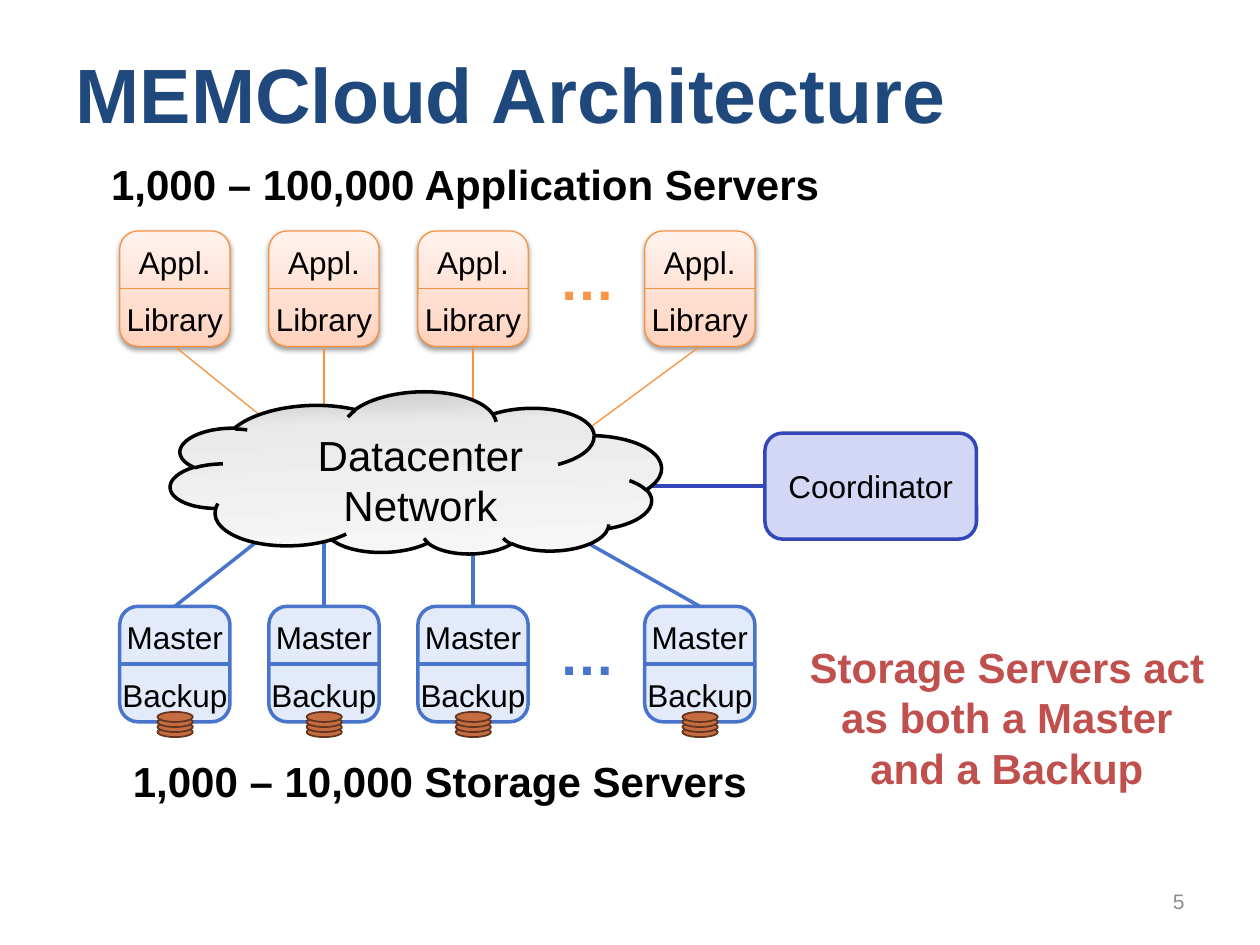
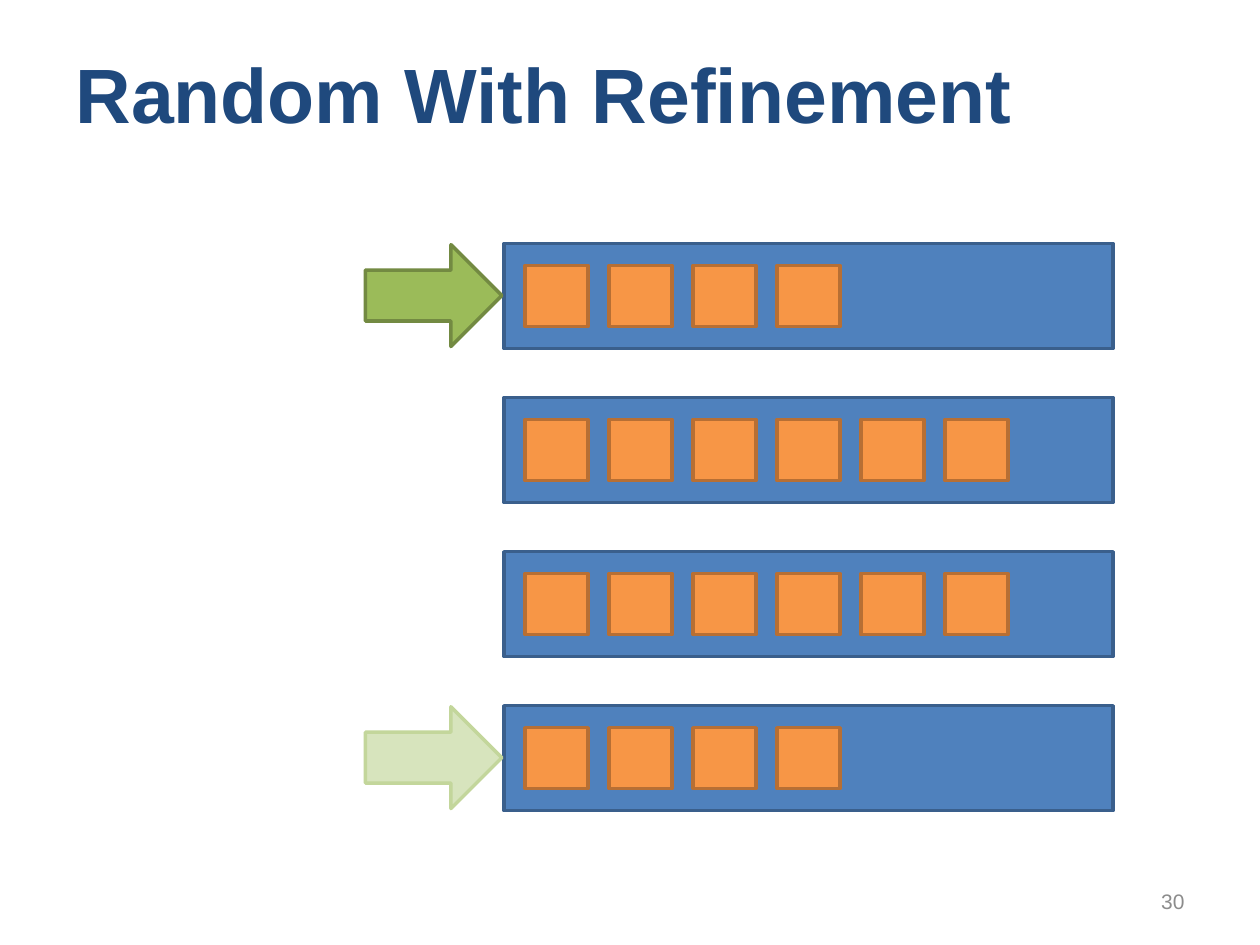
from lxml import etree
from pptx import Presentation
from pptx import util as u
from pptx.dml.color import RGBColor
from pptx.enum import shapes, text
from pptx.oxml import ns

BLACK = RGBColor(0x00, 0x00, 0x00)
NAVY = RGBColor(0x1F, 0x49, 0x7D)
GRAY = RGBColor(0x8C, 0x8C, 0x8C)
RED = RGBColor(0xC0, 0x50, 0x4D)
ORANGE = RGBColor(0xF7, 0x96, 0x46)
AMBER = RGBColor(0xF6, 0x92, 0x40)
RUST = RGBColor(0xB7, 0x6F, 0x34)
COPPER = RGBColor(0xC5, 0x6D, 0x41)
BROWN = RGBColor(0x64, 0x35, 0x1E)
BLUE = RGBColor(0x4F, 0x81, 0xBD)
STEEL = RGBColor(0x3A, 0x5F, 0x8C)
SKY = RGBColor(0x49, 0x74, 0xCB)
ICE = RGBColor(0xE3, 0xEA, 0xF9)
INDIGO = RGBColor(0x34, 0x47, 0xB8)
LILAC = RGBColor(0xD2, 0xD7, 0xF6)
GREEN = RGBColor(0x9B, 0xBB, 0x59)
OLIVE = RGBColor(0x73, 0x8A, 0x42)
MINT = RGBColor(0xD7, 0xE4, 0xBD)
SAGE = RGBColor(0xC3, 0xD6, 0x9B)
PEACH = [(0, RGBColor(0xFF, 0xD2, 0xBD)), (35, RGBColor(0xFF, 0xDE, 0xD0)),
         (100, RGBColor(0xFF, 0xF2, 0xED))]
SILVER = [(0, RGBColor(0xF8, 0xF8, 0xF8)), (76, RGBColor(0xEA, 0xEA, 0xEA)),
          (100, RGBColor(0xC0, 0xC0, 0xC0))]

FONT = "Arial"
COLS, ROWS = 120, 90
LEFT, MID, RIGHT = text.PP_ALIGN.LEFT, text.PP_ALIGN.CENTER, text.PP_ALIGN.RIGHT
TOP, CORE = text.MSO_ANCHOR.TOP, text.MSO_ANCHOR.MIDDLE
KIND = shapes.MSO_SHAPE


def node(parent, tag, **attrs):
    return etree.SubElement(parent, ns.qn(tag), **attrs)


class Deck:
    """Holds the style and the current slide; lengths are grid columns and rows."""

    def __init__(self):
        self.prs = Presentation()
        self.prs.slide_width, self.prs.slide_height = u.Inches(10), u.Inches(7.5)
        self.col = self.prs.slide_width / COLS
        self.row = self.prs.slide_height / ROWS

    def place(self, *cells):
        units = (self.col, self.row) * 2
        return [round(cell * unit) for cell, unit in zip(cells, units)]

    def page(self, title, number):
        self.slide = self.prs.slides.add_slide(self.prs.slide_layouts[5])
        head = self.slide.shapes.title
        head.left, head.top, head.width, head.height = self.place(6, 3.6, 108, 10.4)
        self.letter(head, title, 44, NAVY, LEFT, True, CORE)
        self.label(str(number), (86, 83.4, 28, 4.8), 12, GRAY, RIGHT, anchor=CORE)

    def letter(self, shape, words, size, hue, align=MID, bold=False, anchor=TOP):
        """Set the words of a shape and their style."""
        frame = shape.text_frame
        frame.text = words
        frame.word_wrap = True
        frame.auto_size = text.MSO_AUTO_SIZE.NONE
        frame.vertical_anchor = anchor
        for para in frame.paragraphs:
            para.alignment = align
            para.font.name, para.font.size = FONT, u.Pt(size)
            para.font.bold, para.font.color.rgb = bold, hue
        return frame

    def label(self, words, cells, size, hue=BLACK, align=MID, bold=False,
              anchor=TOP, inset=True):
        box = self.slide.shapes.add_textbox(*self.place(*cells))
        frame = self.letter(box, words, size, hue, align, bold, anchor)
        if not inset:
            frame.margin_left = frame.margin_right = 0
            frame.margin_top = frame.margin_bottom = 0
        return frame

    def shape(self, kind, cells, fill, line, width=2):
        item = self.slide.shapes.add_shape(kind, *self.place(*cells))
        item.shadow.inherit = False
        if isinstance(fill, list):
            self.blend(item, fill)
        else:
            item.fill.solid()
            item.fill.fore_color.rgb = fill
        item.line.color.rgb, item.line.width = line, u.Pt(width)
        return item

    def blend(self, item, stops):
        """Fill with a gradient that runs from bottom to top."""
        item.fill.gradient()
        item.fill.gradient_angle = 90
        ramp = item.element.spPr.find(".//" + ns.qn("a:gsLst"))
        for old in list(ramp):
            ramp.remove(old)
        for share, hue in stops:
            stop = node(ramp, "a:gs", pos=str(share * 1000))
            node(stop, "a:srgbClr", val=str(hue))

    def shade(self, item):
        effects = item.element.spPr.find(ns.qn("a:effectLst"))
        drop = node(effects, "a:outerShdw", blurRad=str(u.Pt(3.1)),
                    dist=str(u.Pt(1.6)), dir="5400000", rotWithShape="0")
        hue = node(drop, "a:srgbClr", val=str(BLACK))
        node(hue, "a:alpha", val="38000")

    def wire(self, box, side, hue, width, end=(0, 0), far=None):
        """Join a side of the box to a grid point, or to its far side."""
        x, y = self.place(*end)
        wire = self.slide.shapes.add_connector(
            shapes.MSO_CONNECTOR.STRAIGHT, x, y, x, y)
        wire.begin_connect(box, side)
        if far is not None:
            wire.end_connect(box, far)
        wire.line.color.rgb, wire.line.width = hue, u.Pt(width)
        node(wire.element.spPr, "a:effectLst")

    def server(self, x, y, parts, fill, line, width):
        """Draw a box of two halves, each with its name."""
        box = self.shape(KIND.ROUNDED_RECTANGLE, (x, y, 10.5, 11), fill, line, width)
        for i, part in enumerate(parts):
            self.label(part, (x, y + 1.1 + 5.5 * i, 10.5, 3.4), 18, inset=False)
        self.wire(box, 1, line, width, far=3)
        return box

    def disk(self, x, y):
        for i in range(4):
            self.shape(KIND.OVAL, (x, y - 0.48 * i, 3.36, 0.96), COPPER, BROWN, 1)


def network(deck):
    deck.page("MEMCloud Architecture", 5)
    spots = [11.4, 25.6, 39.8, 61.4]
    high = [(25.7, 40.3), (30.85, 39.4), (45.05, 39.4), (55.4, 41.3)]
    low = [(24.7, 51.4), (30.85, 51.4), (45.05, 52.2), (55.4, 51.4)]
    for x, top, base in zip(spots, high, low):
        app = deck.server(x, 22, ("Appl.", "Library"), PEACH, AMBER, 0.75)
        deck.shade(app)
        deck.wire(app, 2, AMBER, 0.75, top)
        store = deck.server(x, 57.75, ("Master", "Backup"), ICE, SKY, 2)
        deck.wire(store, 0, SKY, 2, base)
        deck.disk(x + 3.6, 69.24)
    for y, hue in ((22.7, ORANGE), (58.4, SKY)):
        deck.label("…", (52.4, y, 7.2, 7.1), 32, hue, bold=True).word_wrap = False

    lead = deck.shape(KIND.ROUNDED_RECTANGLE, (72.85, 41.25, 20.15, 10.1), LILAC, INDIGO)
    deck.letter(lead, "Coordinator", 18, BLACK, anchor=CORE)
    deck.wire(lead, 1, INDIGO, 2, (61.1, 46.3))

    cloud = deck.shape(KIND.CLOUD, (16.2, 37.4, 46.8, 15.6), SILVER, BLACK)
    cloud.rotation = 358
    cloud.fill.gradient_angle = 270
    cloud.element.spPr.find(ns.qn("a:xfrm")).set("flipV", "1")
    deck.label("Datacenter\vNetwork", (27.7, 40.3, 24.7, 10), 24)

    deck.label("1,000 – 100,000 Application Servers", (9.4, 14.5, 70, 6), 24,
               align=LEFT, bold=True)
    deck.label("1,000 – 10,000 Storage Servers", (7.4, 71.4, 69, 6), 24, bold=True)
    deck.label("Storage Servers act as both a Master and a Backup",
               (75, 60.5, 41.8, 15.7), 24, RED, bold=True)


def refine(deck):
    deck.page("Random With Refinement", 30)
    arrows = {0: (GREEN, OLIVE), 3: (MINT, SAGE)}
    for i, count in enumerate((4, 6, 6, 4)):
        y = 23.2 + 14.67 * i
        deck.shape(KIND.RECTANGLE, (48, y, 58, 10), BLUE, STEEL)
        for j in range(count):
            deck.shape(KIND.RECTANGLE, (50 + 8 * j, y + 2.1, 6, 5.8), ORANGE, RUST)
        if i in arrows:
            deck.shape(KIND.RIGHT_ARROW, (34.8, y + 0.1, 13, 9.7), *arrows[i])


def main():
    deck = Deck()
    network(deck)
    refine(deck)
    deck.prs.save("out.pptx")


if __name__ == "__main__":
    main()
